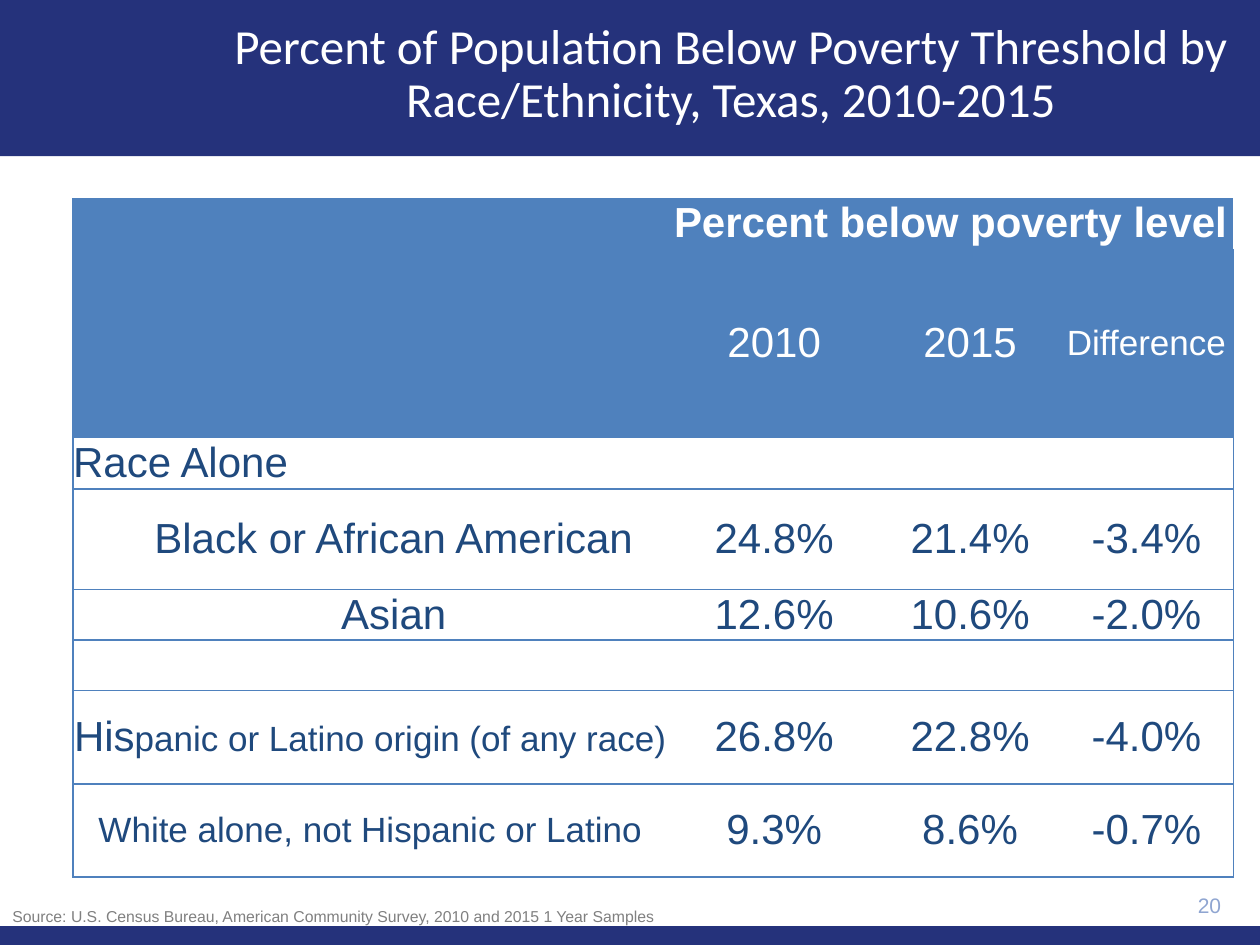
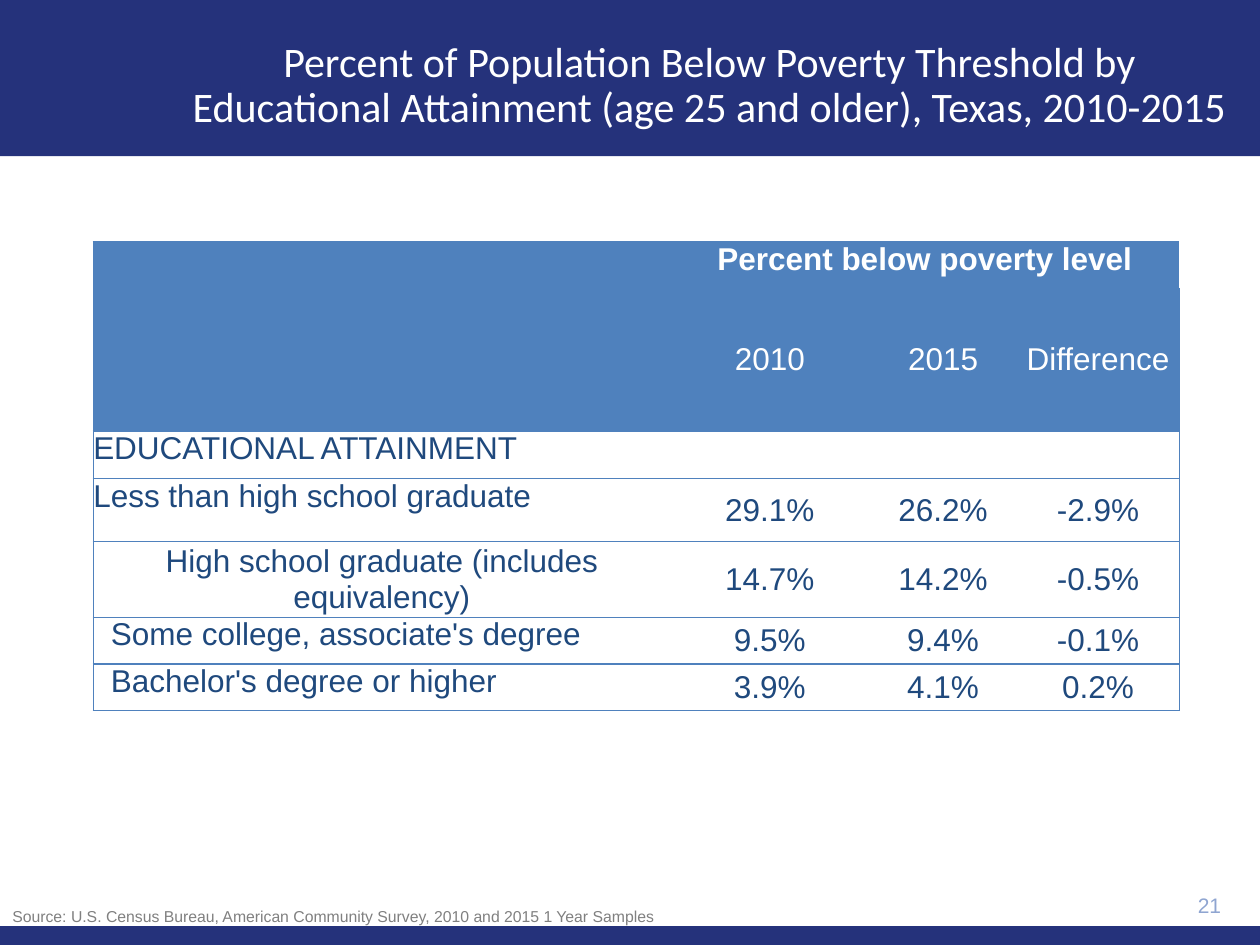
import pptx
import pptx.util
import pptx.dml.color
import pptx.enum.shapes
import pptx.enum.text
import pptx.oxml
import pptx.oxml.ns
from lxml import etree

Inches = pptx.util.Inches
Align = pptx.enum.text.PP_ALIGN
Anchor = pptx.enum.text.MSO_ANCHOR

COLORS = {
    "band": "25327B",
    "header": "4F81BD",
    "body": "1F497D",
    "white": "FFFFFF",
    "page": "8FA5D1",
    "source": "808080",
}
NO_STYLE = "{2D5ABB26-0587-4C30-8999-92F81FD0307C}"
SOURCE = ("Source: U.S. Census Bureau, American Community Survey, "
          "2010 and 2015 1 Year Samples")


def rgb(name):
    return pptx.dml.color.RGBColor.from_string(COLORS[name])


class Deck:
    def __init__(self):
        self.prs = pptx.Presentation()
        self.prs.slide_width = Inches(10)
        self.prs.slide_height = Inches(7.5)
        self.slide = None

    def new_slide(self, title, title_box, title_size, page):
        self.slide = self.prs.slides.add_slide(self.prs.slide_layouts[6])
        self.band(0, 1.24)
        self.band(7.35, 0.15)
        self.text(title, title_box, title_size, "white", "Calibri",
                  Align.CENTER, Anchor.MIDDLE, 0.9)
        self.text(str(page), (8.9, 7.01, 0.89, 0.34), 12, "page",
                  align=Align.RIGHT, anchor=Anchor.MIDDLE)
        self.text(SOURCE, (0, 7.14, 7, 0.26), 9, "source", spacing=1.07)

    def band(self, top, height):
        band = self.slide.shapes.add_shape(
            pptx.enum.shapes.MSO_SHAPE.RECTANGLE,
            0, Inches(top), self.prs.slide_width, Inches(height))
        band.shadow.inherit = False
        band.fill.solid()
        band.fill.fore_color.rgb = rgb("band")
        band.line.fill.background()

    def style(self, paragraph, size, color, font="Arial", align=Align.LEFT, bold=False):
        paragraph.alignment = align
        paragraph.font.name = font
        paragraph.font.size = pptx.util.Pt(size)
        paragraph.font.bold = bold
        paragraph.font.color.rgb = rgb(color)

    def text(self, words, box, size, color, font="Arial", align=Align.LEFT,
             anchor=Anchor.TOP, spacing=1.0):
        frame = self.slide.shapes.add_textbox(*map(Inches, box)).text_frame
        frame.word_wrap = True
        frame.vertical_anchor = anchor
        paragraph = frame.paragraphs[0]
        paragraph.text = words
        paragraph.line_spacing = spacing
        self.style(paragraph, size, color, font, align)

    def borders(self, cell, sides):
        properties = cell._tc.get_or_add_tcPr()
        for side in sides:
            line = etree.SubElement(properties, pptx.oxml.ns.qn(f"a:ln{side}"),
                                    w=str(pptx.util.Pt(1)))
            fill = etree.SubElement(line, pptx.oxml.ns.qn("a:solidFill"))
            etree.SubElement(fill, pptx.oxml.ns.qn("a:srgbClr"), val=COLORS["header"])

    def cell(self, cell, words, size, color, align=Align.CENTER,
             anchor=Anchor.MIDDLE, indent=0, bold=False):
        cell.margin_right = cell.margin_top = cell.margin_bottom = 0
        cell.margin_left = Inches(indent)
        cell.vertical_anchor = anchor
        paragraph = cell.text_frame.paragraphs[0]
        if isinstance(words, str):
            paragraph.text = words
            self.style(paragraph, size, color, align=align, bold=bold)
            return
        self.style(paragraph, size, color, align=align, bold=bold)
        for part, part_size in words:
            run = paragraph.add_run()
            run.text = part
            run.font.size = pptx.util.Pt(part_size)

    def poverty_table(self, left, top, widths, heights, size, difference_size, groups):
        frame = self.slide.shapes.add_table(
            len(heights), len(widths), Inches(left), Inches(top),
            Inches(sum(widths)), Inches(sum(heights)))
        next(frame.element.iter(pptx.oxml.ns.qn("a:tableStyleId"))).text = NO_STYLE
        table = frame.table
        table.first_row = table.horz_banding = False
        for column, width in zip(table.columns, widths):
            column.width = Inches(width)
        for row, height in zip(table.rows, heights):
            row.height = Inches(height)
        last = len(widths) - 1
        for r in range(len(heights)):
            for c in range(len(widths)):
                cell = table.cell(r, c)
                self.borders(cell, "L" * (c == 0) + "R" * (c == last) + "TB")
                cell.fill.solid()
                cell.fill.fore_color.rgb = rgb("header" if r < 2 else "white")
        table.cell(0, 0).merge(table.cell(1, 0))
        table.cell(0, 1).merge(table.cell(0, last))
        self.cell(table.cell(0, 1), "Percent below poverty level", size, "white",
                  anchor=Anchor.TOP, bold=True)
        headings = (("2010", size), ("2015", size), ("Difference", difference_size))
        for c, (heading, heading_size) in enumerate(headings, 1):
            self.cell(table.cell(1, c), heading, heading_size, "white")
        for r, (label, layout, *values) in enumerate(groups, 2):
            self.cell(table.cell(r, 0), label, **{"size": size, "color": "body", **layout})
            for c in range(1, len(widths)):
                value = values[c - 1] if values else ""
                self.cell(table.cell(r, c), value, size, "body")


def main():
    deck = Deck()

    deck.new_slide("Percent of Population Below Poverty Threshold by "
                   "Race/Ethnicity, Texas, 2010-2015", (1.7, 0.1, 8.2, 1), 28, 20)
    indented = {"indent": 0.37}
    deck.poverty_table(
        0.58, 1.58, (4.72, 1.69, 1.42, 1.38),
        (0.4, 1.49, 0.41, 0.8, 0.4, 0.4, 0.74, 0.74), 24, 20,
        (
            ("Race Alone", {"align": Align.LEFT}),
            ("Black or African American", indented, "24.8%", "21.4%", "-3.4%"),
            ("Asian", indented, "12.6%", "10.6%", "-2.0%"),
            ("", {}),
            ((("His", 24), ("panic or Latino origin (of any race)", 20)), {},
             "26.8%", "22.8%", "-4.0%"),
            ("White alone, not Hispanic or Latino", {"size": 20},
             "9.3%", "8.6%", "-0.7%"),
        ))

    deck.new_slide("Percent of Population Below Poverty Threshold by "
                   "Educational Attainment (age 25 and older), Texas, 2010-2015",
                   (1.42, 0.11, 8.42, 1.15), 24, 21)
    top_left = {"align": Align.LEFT, "anchor": Anchor.TOP}
    top_indented = {**top_left, "indent": 0.14}
    deck.poverty_table(
        0.74, 1.92, (4.58, 1.58, 1.17, 1.29),
        (0.37, 1.13, 0.38, 0.5, 0.6, 0.37, 0.37), 18, 18,
        (
            ("EDUCATIONAL ATTAINMENT", top_left),
            ("Less than high school graduate", top_left, "29.1%", "26.2%", "-2.9%"),
            ("High school graduate (includes equivalency)", {},
             "14.7%", "14.2%", "-0.5%"),
            ("Some college, associate's degree", top_indented, "9.5%", "9.4%", "-0.1%"),
            ("Bachelor's degree or higher", top_indented, "3.9%", "4.1%", "0.2%"),
        ))

    deck.prs.save("out.pptx")


if __name__ == "__main__":
    main()
